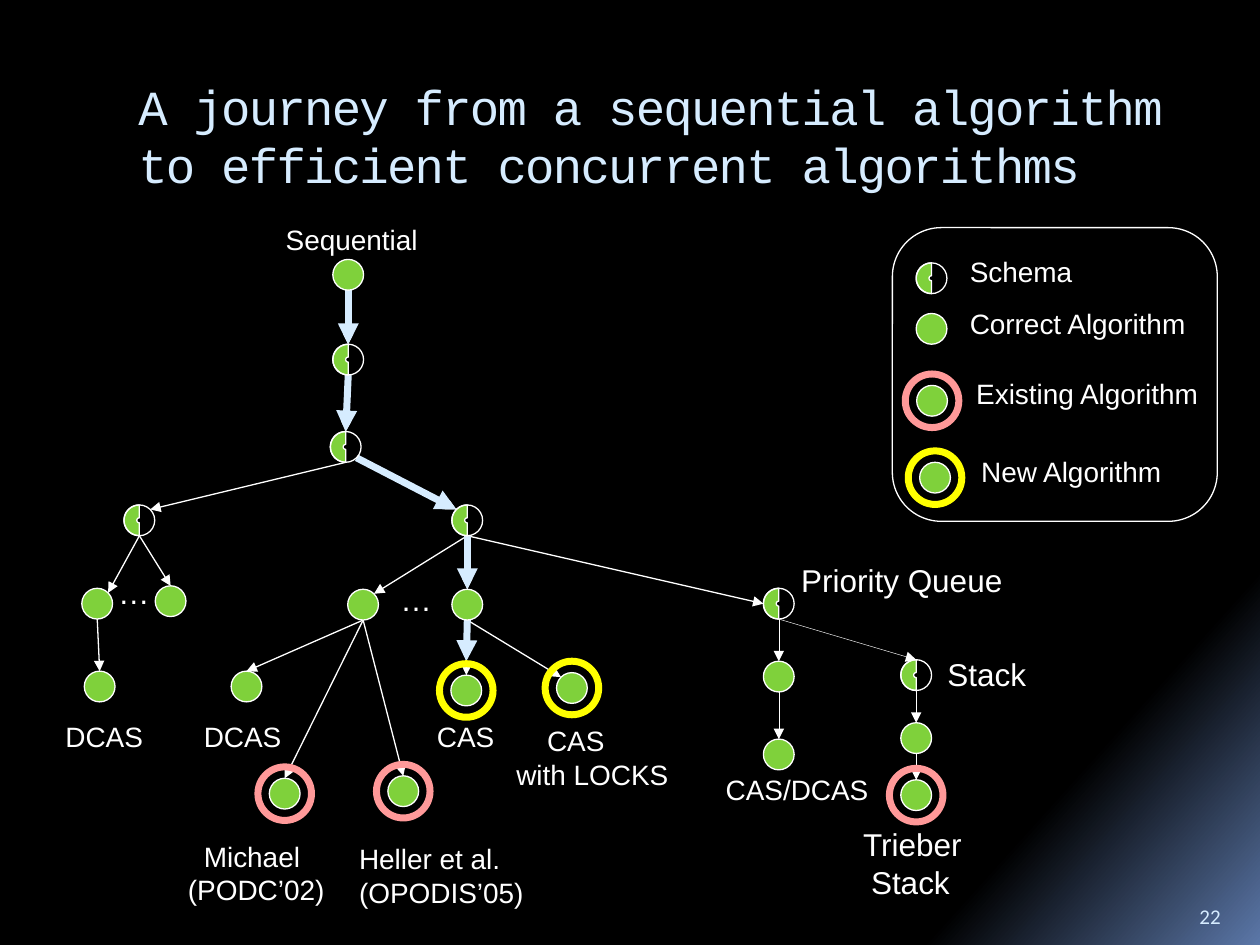
import math

import lxml.etree
import pptx
import pptx.dml.color
import pptx.enum.shapes
import pptx.enum.text
import pptx.oxml.ns
import pptx.util

Cm = pptx.util.Cm
HUES = {"back": "000000", "glow": "5B77A8", "pale": "D6ECFF", "white": "FFFFFF",
        "green": "7FD13B", "pink": "FF9999", "yellow": "FFFF00"}
RAD = 0.31
DIAG = RAD * math.sqrt(0.5)
PORTS = {"top": (0, -RAD), "base": (0, RAD), "left": (-RAD, 0),
         "ne": (DIAG, -DIAG), "nw": (-DIAG, -DIAG), "se": (DIAG, DIAG)}

HALVES = {"first": (7.02, 7.25), "second": (6.97, 9.01), "west": (2.81, 10.49),
          "mid": (9.42, 10.49), "queue": (15.7, 12.17), "stack": (18.47, 13.61),
          "key": (18.78, 5.61)}
DOTS = {"root": (7.02, 5.54), "west a": (1.96, 12.17), "west b": (3.44, 12.12),
        "west end": (2.01, 13.84), "mid a": (7.32, 12.19), "mid b": (9.42, 12.19),
        "dcas": (4.97, 13.84), "cas": (9.4, 13.92), "locks": (11.53, 13.87),
        "michael": (5.74, 16), "heller": (8.13, 15.95), "queue a": (15.7, 13.64),
        "queue b": (15.7, 15.21), "stack a": (18.47, 14.88), "stack b": (18.47, 16.03),
        "key": (18.78, 6.63), "old key": (18.79, 8.08), "new key": (18.85, 9.63)}
NODES = {**DOTS, **{name: HALVES[name] for name in HALVES if name != "key"}}
RINGS = {"pink": ("michael", "heller", "stack b", "old key"),
         "yellow": ("cas", "locks", "new key")}

SPINE = [("root", "base", "first", "top"), ("first", "base", "second", "top"),
         ("second", "se", "mid", "nw"), ("mid", "base", "mid b", "top"),
         ("mid b", "base", "cas", "top")]
TWIGS = [("queue", "base", "queue a", "top"), ("queue a", "base", "queue b", "top"),
         ("queue", "base", "stack", "top"), ("stack", "base", "stack a", "top"),
         ("stack a", "base", "stack b", "top")]
LIMBS = [("second", "base", "west", "ne"), ("west", "base", "west b", "top"),
         ("west", "base", "west a", "ne"), ("west a", "base", "west end", "top"),
         ("mid", "base", "mid a", "ne"), ("mid", "base", "queue", "left"),
         ("mid a", "base", "dcas", "top"), ("mid a", "base", "michael", "top"),
         ("mid a", "base", "heller", "top"), ("mid b", "base", "locks", "nw")]

LABELS = [("Sequential", 5.51, 4.37, 3.4), ("Schema", 19.3, 5, 2.8),
          ("Correct Algorithm", 19.3, 6.05, 5.1), ("Existing Algorithm", 19.43, 7.47, 5.2),
          ("New Algorithm", 19.53, 9.04, 4.4), ("DCAS", 1.07, 14.38, 2.3),
          ("DCAS", 3.86, 14.38, 2.3), ("CAS", 8.56, 14.38, 1.9),
          ("CAS/DCAS", 14.38, 15.44, 3.6), ("Heller et al.\n(OPODIS’05)", 6.99, 16.84, 4.1)]
NAMES = [("Priority Queue", 15.9, 11.18, 4.8), ("Stack", 18.85, 13.08, 2.3),
         ("…", 2.13, 11.43, 1.3), ("…", 7.82, 11.56, 1.3)]


def write(box, text, size=16, font="Arial", hue="white", dents=(), lead=None, space=None):
    for row, line in enumerate(text.split("\n")):
        para = box.paragraphs[0] if row == 0 else box.add_paragraph()
        if row < len(dents):
            para._p.get_or_add_pPr().set("marL", str(Cm(dents[row])))
        if lead:
            para.line_spacing = pptx.util.Pt(lead)
        run = para.add_run()
        run.text = line
        run.font.size = pptx.util.Pt(size)
        run.font.name = font
        run.font.color.rgb = tint(hue)
        if space:
            run._r.get_or_add_rPr().set("spc", str(space))


def tint(hue):
    return pptx.dml.color.RGBColor.from_string(HUES[hue])


class Chart:
    def __init__(self, slide):
        self.slide = slide
        self.shapes = slide.shapes
        self.thin = 0.75

    def ground(self):
        fill = self.slide.background.fill
        fill.gradient()
        fill.gradient_angle = 318
        for stop, hue, place in zip(fill.gradient_stops, ("back", "glow"), (0.84, 1)):
            stop.color.rgb = tint(hue)
            stop.position = place

    def style(self, shape, fill=None, line="white", width=None):
        shape.shadow.inherit = False
        if fill:
            shape.fill.solid()
            shape.fill.fore_color.rgb = tint(fill)
        else:
            shape.fill.background()
        shape.line.color.rgb = tint(line)
        shape.line.width = pptx.util.Pt(width or self.thin)

    def round(self, spot, rad=RAD, home=None, **look):
        x, y = spot
        shape = (home or self.shapes).add_shape(
            pptx.enum.shapes.MSO_SHAPE.OVAL,
            Cm(x - rad), Cm(y - rad), Cm(2 * rad), Cm(2 * rad))
        self.style(shape, **look)

    def half(self, spot):
        x, y = spot
        home = self.shapes.add_group_shape().shapes
        arc = [(x + rad * math.cos(math.radians(turn)), y - rad * math.sin(math.radians(turn)))
               for rad, turns in ((RAD, range(90, 271, 10)), (0.05, range(270, 89, -20)))
               for turn in turns]
        pen = home.build_freeform(*map(Cm, arc[0]))
        pen.add_line_segments([(Cm(a), Cm(b)) for a, b in arc[1:]], close=True)
        self.style(pen.convert_to_shape(), fill="green")
        self.round(spot, home=home)

    def frame(self, x, y, wide, high):
        shape = self.shapes.add_shape(pptx.enum.shapes.MSO_SHAPE.ROUNDED_RECTANGLE,
                                      Cm(x), Cm(y), Cm(wide), Cm(high))
        self.style(shape)

    def arrow(self, start, out, end, into, hue="white", width=0.75, short=0):
        (ax, ay), (bx, by) = NODES[start], NODES[end]
        (px, py), (qx, qy) = PORTS[out], PORTS[into]
        line = self.shapes.add_connector(
            pptx.enum.shapes.MSO_CONNECTOR.STRAIGHT,
            Cm(ax + px), Cm(ay + py), Cm(bx + qx), Cm(by + qy - short))
        line.line.color.rgb = tint(hue)
        line.line.width = pptx.util.Pt(width)
        name = pptx.oxml.ns.qn
        tail = lxml.etree.SubElement(line.line._get_or_add_ln(), name("a:tailEnd"))
        tail.set("type", "triangle")
        lxml.etree.SubElement(line._element.spPr, name("a:effectLst"))

    def label(self, text, x, y, wide, high=None, **form):
        rows = text.count("\n") + 1
        high = high or 0.25 + rows * form.get("size", 16) * 0.043
        box = self.shapes.add_textbox(Cm(x), Cm(y), Cm(wide), Cm(high)).text_frame
        box.word_wrap = True
        write(box, text, **form)
        return box


def main():
    deck = pptx.Presentation()
    deck.slide_width, deck.slide_height = Cm(25.4), Cm(19.05)
    chart = Chart(deck.slides.add_slide(deck.slide_layouts[6]))
    chart.ground()
    title = chart.label("A journey from a sequential algorithm\nto efficient concurrent algorithms",
                        2.54, 1.42, 21.59, 2.54, size=28, font="Courier New",
                        hue="pale", lead=33.5, space=-100)
    title.margin_top = Cm(0.12)
    chart.frame(17.99, 4.59, 6.55, 5.92)

    for edge in SPINE + TWIGS:
        chart.arrow(*edge, width=0.25)
    for edge in LIMBS:
        chart.arrow(*edge)
    for edge in SPINE:
        chart.arrow(*edge, hue="pale", width=4, short=0.28 if edge[2] == "cas" else 0)
    for spot in HALVES.values():
        chart.half(spot)
    for spot in DOTS.values():
        chart.round(spot, fill="green")
    for hue, names in RINGS.items():
        for name in names:
            chart.round(DOTS[name], rad=0.54, line=hue, width=4)

    for label in LABELS:
        chart.label(*label)
    for name in NAMES:
        chart.label(*name, size=18)
    chart.label("CAS\nwith LOCKS", 10.16, 14.46, 3.9, dents=(0.62,))
    chart.label("Michael\n(PODC’02)", 3.54, 16.79, 3.6, dents=(0.32,))
    chart.label("Trieber\nStack", 17.15, 16.51, 4.01, size=18, dents=(0, 0.16))
    page = chart.label("22", 23.93, 17.83, 1.27, 1.02,
                       size=12, font="Calibri", hue="pale")
    page.vertical_anchor = pptx.enum.text.MSO_ANCHOR.BOTTOM
    deck.save("out.pptx")


if __name__ == "__main__":
    main()
